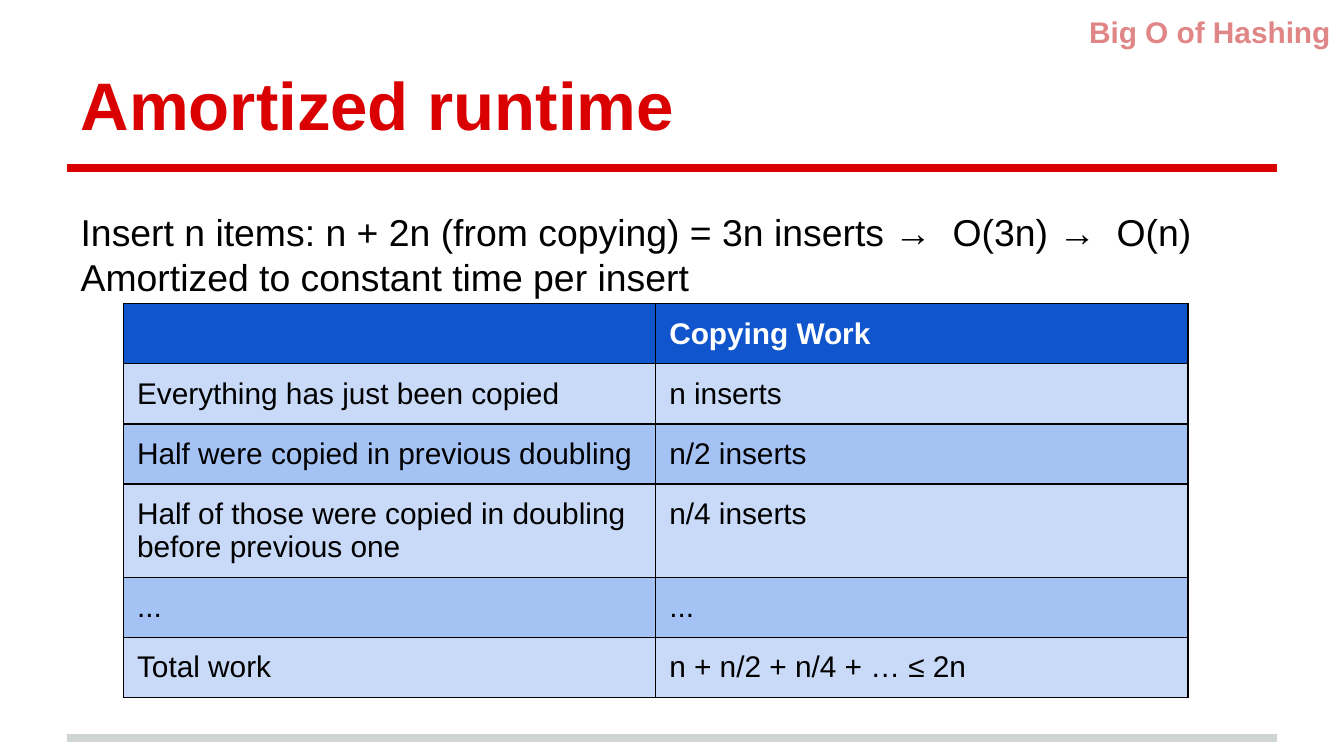
from lxml.etree import SubElement
from pptx import Presentation
from pptx.dml.color import RGBColor
from pptx.enum.shapes import MSO_CONNECTOR as Connector
from pptx.enum.text import MSO_ANCHOR as Anchor, MSO_AUTO_SIZE as AutoSize, PP_ALIGN as Align
from pptx.oxml.ns import qn
from pptx.util import Inches, Pt

RED = RGBColor(0xDA, 0x00, 0x02)
PINK = RGBColor(0xE0, 0x86, 0x86)
GREY = RGBColor(0xCF, 0xD4, 0xD4)
BLACK = RGBColor(0x00, 0x00, 0x00)
WHITE = RGBColor(0xFF, 0xFF, 0xFF)
HEADER_BLUE = RGBColor(0x11, 0x55, 0xCC)
BAND_BLUES = (RGBColor(0xC9, 0xDA, 0xF8), RGBColor(0xA4, 0xC2, 0xF4))

PAGE_WIDTH = Inches(10)
PAGE_HEIGHT = PAGE_WIDTH * 9 // 16

TITLE = {"size": Pt(36), "bold": True, "color": RED}
TOPIC = {"size": Pt(16), "bold": True, "color": PINK}
BODY = {"size": Pt(20), "bold": False, "color": BLACK}
HEADER = {"size": Pt(16), "bold": True, "color": WHITE}
CELL = {"size": Pt(16), "bold": False, "color": BLACK}

SUMMARY = [
    "Insert n items: n + 2n (from copying) = 3n inserts →  O(3n) →  O(n)",
    "Amortized to constant time per insert",
]
COPYING_WORK = [
    ("", "Copying Work"),
    ("Everything has just been copied", "n inserts"),
    ("Half were copied in previous doubling", "n/2 inserts"),
    ("Half of those were copied in doubling before previous one", "n/4 inserts"),
    ("...", "..."),
    ("Total work", "n + n/2 + n/4 + … ≤ 2n"),
]
ROW_HEIGHTS = (0.29, 0.29, 0.29, 0.45, 0.29, 0.29)


def set_all(target, values):
    """Set each attribute of the target from a dict."""
    for name, value in values.items():
        setattr(target, name, value)


def format_font(font, style):
    """Apply typeface, size, weight and colour to a font."""
    set_all(font, {"name": "Arial", "size": style["size"], "bold": style["bold"]})
    font.color.rgb = style["color"]


def set_margins(target):
    """Give a text frame or cell equal margins."""
    sides = ("left", "top", "right", "bottom")
    set_all(target, {f"margin_{side}": Inches(0.1) for side in sides})


def fill_text(box, place, lines, style, align=Align.LEFT, anchor=Anchor.TOP):
    """Place a text shape and write its plain paragraphs."""
    set_all(box, dict(zip(("left", "top", "width", "height"), map(Inches, place))))
    frame = box.text_frame
    set_margins(frame)
    set_all(frame, {"word_wrap": True, "auto_size": AutoSize.NONE, "vertical_anchor": anchor})
    frame.text = "\n".join(lines)
    for para in frame.paragraphs:
        properties = para._p.get_or_add_pPr()
        properties.set("marL", "0")
        properties.set("indent", "0")
        SubElement(properties, qn("a:buNone"))
        set_all(para, {"alignment": align, "space_before": Pt(0)})
        for span in para.runs:
            format_font(span.font, style)


def add_rule(page, top, color):
    """Draw a horizontal rule across the page."""
    ends = map(Inches, (0.5, top, 9.5, top))
    rule = page.shapes.add_connector(Connector.STRAIGHT, *ends)
    rule.line.width = Pt(4)
    rule.line.color.rgb = color
    SubElement(rule._element.spPr, qn("a:effectLst"))


def add_borders(cell):
    """Outline a cell with thin black lines."""
    properties = cell._tc.get_or_add_tcPr()
    for index, side in enumerate(("lnL", "lnR", "lnT", "lnB")):
        line = properties.makeelement(qn(f"a:{side}"), {"w": str(Pt(0.75))})
        fill = SubElement(line, qn("a:solidFill"))
        SubElement(fill, qn("a:srgbClr"), val=str(BLACK))
        properties.insert(index, line)


def fill_cell(cell, text, style, color):
    """Write, colour and outline one table cell."""
    cell.text = text
    set_margins(cell)
    para = cell.text_frame.paragraphs[0]
    for target in (para, *para.runs):
        format_font(target.font, style)
    cell.fill.solid()
    cell.fill.fore_color.rgb = color
    add_borders(cell)


def add_work_table(page):
    """Add the table of copying work."""
    place = map(Inches, (0.92, 2.26, 7.92, 3.07))
    frame = page.shapes.add_table(len(COPYING_WORK), 2, *place)
    table = frame.table
    for number, (texts, height) in enumerate(zip(COPYING_WORK, ROW_HEIGHTS)):
        table.rows[number].height = Inches(height)
        style = CELL if number else HEADER
        color = BAND_BLUES[(number - 1) % 2] if number else HEADER_BLUE
        for cell, text in zip(table.rows[number].cells, texts):
            fill_cell(cell, text, style, color)
    frame.height = Inches(3.07)


def main():
    """Build and save the slide."""
    deck = Presentation()
    set_all(deck, {"slide_width": PAGE_WIDTH, "slide_height": PAGE_HEIGHT})
    page = deck.slides.add_slide(deck.slide_layouts[1])
    add_rule(page, 5.49, GREY)
    add_rule(page, 1.25, RED)
    title, body = page.placeholders
    fill_text(title, (0.5, 0.23, 9.38, 0.94), ["Amortized runtime"], TITLE, anchor=Anchor.BOTTOM)
    topic = page.shapes.add_textbox(0, 0, 0, 0)
    fill_text(topic, (7.66, 0, 2.34, 0.4), ["Big O of Hashing"], TOPIC, align=Align.RIGHT)
    fill_text(body, (0.5, 1.46, 8.76, 1.15), SUMMARY, BODY)
    add_work_table(page)
    deck.save("out.pptx")


if __name__ == "__main__":
    main()
